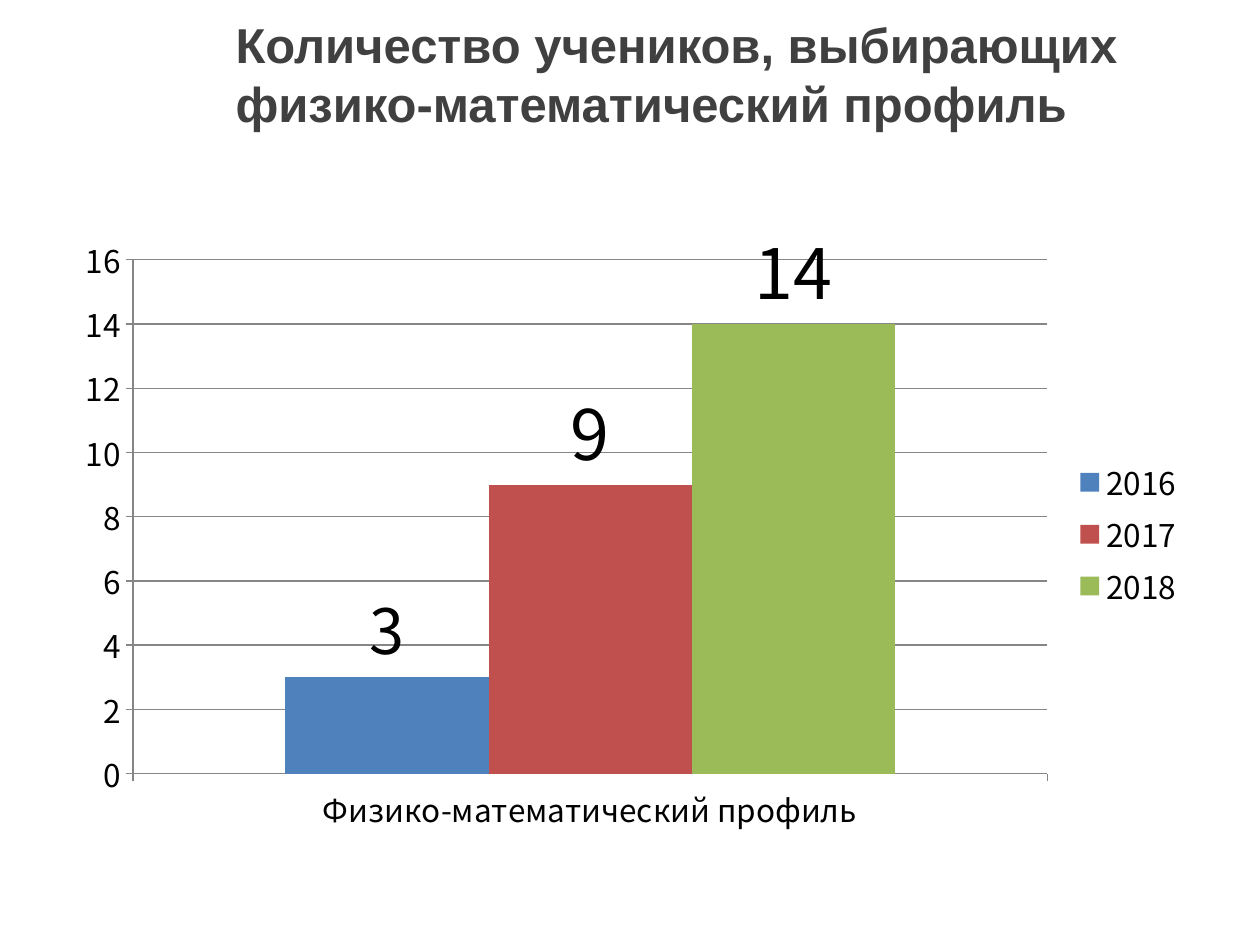
from pptx import Presentation
from pptx import util as u
from pptx.chart.data import CategoryChartData
from pptx.dml.color import RGBColor
from pptx.enum import chart as ch, text

PX = u.Inches(1) // 126
BLACK = RGBColor(0x00, 0x00, 0x00)
GRAY = RGBColor(0x86, 0x86, 0x86)
DARK = RGBColor(0x40, 0x40, 0x40)
BLUE = RGBColor(0x4F, 0x81, 0xBD)
RED = RGBColor(0xC0, 0x50, 0x4D)
GREEN = RGBColor(0x9B, 0xBB, 0x59)

PROFILE = "Физико-математический профиль"
YEARS = [("2016", 3, BLUE, 36), ("2017", 9, RED, 40), ("2018", 14, GREEN, 40)]


class Deck:
    """Holds the text style and the slide being filled."""

    title_font = "Arial"
    chart_font = "Noto Sans CJK KR"

    def __init__(self, slide):
        self.slide = slide

    def style(self, font, name, size, color, bold=False):
        font.name = name
        font.size = u.Pt(size)
        font.color.rgb = color
        font.bold = bold

    def title(self, wording, left, top, width, height):
        heading = self.slide.shapes.title
        heading.left, heading.top = left * PX, top * PX
        heading.width, heading.height = width * PX, height * PX
        frame = heading.text_frame
        frame.word_wrap = True
        frame.auto_size = text.MSO_AUTO_SIZE.NONE
        frame.vertical_anchor = text.MSO_ANCHOR.MIDDLE
        paragraph = frame.paragraphs[0]
        paragraph.alignment = text.PP_ALIGN.LEFT
        run = paragraph.add_run()
        run.text = wording
        self.style(run.font, self.title_font, 28, DARK, True)

    def columns(self, category, rows, left, top, width, height):
        data = CategoryChartData()
        data.categories = [category]
        for year, pupils, _, _ in rows:
            data.add_series(year, [pupils])
        chart = self.slide.shapes.add_chart(
            ch.XL_CHART_TYPE.COLUMN_CLUSTERED,
            left * PX, top * PX, width * PX, height * PX, data).chart
        self.style(chart.font, self.chart_font, 18, BLACK)
        chart.has_title = False
        chart.has_legend = True
        chart.legend.position = ch.XL_LEGEND_POSITION.RIGHT
        chart.legend.include_in_layout = False
        for axis in (chart.category_axis, chart.value_axis):
            axis.major_tick_mark = ch.XL_TICK_MARK.OUTSIDE
            axis.minor_tick_mark = ch.XL_TICK_MARK.NONE
            axis.format.line.color.rgb = GRAY
        pupils_axis = chart.value_axis
        pupils_axis.minimum_scale, pupils_axis.maximum_scale = 0, 16
        pupils_axis.major_unit = 2
        pupils_axis.has_major_gridlines = True
        pupils_axis.major_gridlines.format.line.color.rgb = GRAY
        plot = chart.plots[0]
        plot.gap_width = 150
        plot.overlap = 0
        plot.vary_by_categories = False
        for series, (_, _, color, size) in zip(plot.series, rows):
            series.format.fill.solid()
            series.format.fill.fore_color.rgb = color
            labels = series.data_labels
            labels.show_value = True
            labels.position = ch.XL_LABEL_POSITION.OUTSIDE_END
            self.style(labels.font, self.chart_font, size, BLACK)


def main():
    presentation = Presentation()
    presentation.slide_width = 1260 * PX
    presentation.slide_height = 945 * PX
    deck = Deck(presentation.slides.add_slide(presentation.slide_layouts[5]))
    deck.title("Количество учеников, выбирающих физико-математический профиль",
               223, 0, 1037, 147)
    deck.columns(PROFILE, YEARS, 63, 220, 1134, 624)
    presentation.save("out.pptx")


if __name__ == "__main__":
    main()
